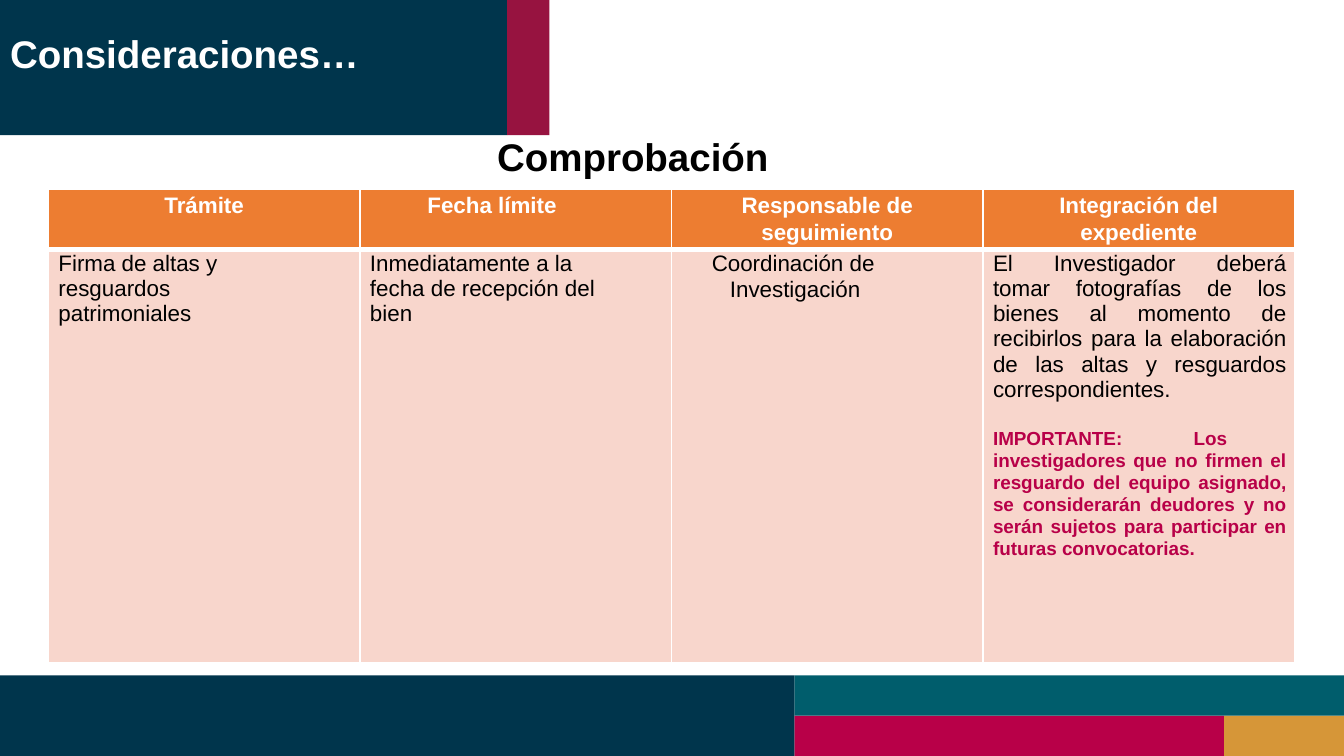
from typing import NamedTuple

from lxml import etree
from pptx import Presentation
from pptx import util as u
from pptx.dml.color import RGBColor
from pptx.enum import shapes, text
from pptx.oxml import ns

SCALE = 9144
FONT = "Arial"
INK = {
    "navy": "00354C", "teal": "005D6C", "pink": "B80048", "wine": "971340",
    "gold": "D69638", "head": "ED7D31", "body": "F8D6CC",
    "white": "FFFFFF", "black": "000000",
}
LEFT, MID, FULL = (text.PP_ALIGN.LEFT, text.PP_ALIGN.CENTER,
                   text.PP_ALIGN.JUSTIFY)


class Block(NamedTuple):
    x: int
    y: int
    w: int
    h: int
    ink: str


class Label(NamedTuple):
    x: int
    y: int
    w: int
    h: int
    words: str
    ink: str


class Para(NamedTuple):
    words: str
    size: float = 16
    ink: str = "black"
    bold: bool = False
    align: text.PP_ALIGN = LEFT
    line: float = 1.01
    space: float = 0
    hang: int = 0
    tab: int = 0


class Cell(NamedTuple):
    paras: list[Para]
    left: int = 10
    top: int = 2
    right: int = 0


def px(n: int) -> u.Emu:
    return u.Emu(n * SCALE)


def rgb(ink: str) -> RGBColor:
    return RGBColor.from_string(INK[ink])


def head(words: str, align: text.PP_ALIGN = MID, line: float = 1.14,
         space: float = 0) -> Para:
    return Para(words, 16, "white", True, align, line, space)


def titles(first: str, second: str) -> Cell:
    return Cell([head(first), head(second, line=1, space=1.6)], 0, 0)


def write(frame, paras: list[Para]) -> None:
    for i, item in enumerate(paras):
        para = frame.add_paragraph() if i else frame.paragraphs[0]
        props = para._p.get_or_add_pPr()
        if item.hang:
            props.set("marL", str(px(item.hang)))
            props.set("indent", str(-px(item.hang)))
        if item.tab:
            tabs = etree.SubElement(props, ns.qn("a:tabLst"))
            etree.SubElement(tabs, ns.qn("a:tab"),
                             pos=str(px(item.tab)), algn="l")
        para.alignment = item.align
        para.line_spacing = item.line
        para.space_before = u.Pt(item.space)
        for j, part in enumerate(item.words.split("\n")):
            if j:
                para.add_line_break()
            run = para.add_run()
            run.text = part
            run.font.name = FONT
            run.font.size = u.Pt(item.size)
            run.font.bold = item.bold
            run.font.color.rgb = rgb(item.ink)


def draw_block(slide, block: Block) -> None:
    box = slide.shapes.add_shape(shapes.MSO_SHAPE.RECTANGLE,
                                 *(px(n) for n in block[:4]))
    box.shadow.inherit = False
    box.fill.solid()
    box.fill.fore_color.rgb = rgb(block.ink)
    box.line.fill.background()


def draw_label(slide, label: Label) -> None:
    box = slide.shapes.add_textbox(*(px(n) for n in label[:4]))
    frame = box.text_frame
    frame.word_wrap = True
    frame.margin_left = frame.margin_top = px(1)
    frame.margin_right = frame.margin_bottom = 0
    write(frame, [Para(label.words, 27.5, label.ink, True, line=1)])


def edge(cell, sides: dict[str, float]) -> None:
    props = cell._tc.get_or_add_tcPr()
    for i, (side, width) in enumerate(sides.items()):
        line = etree.Element(ns.qn(f"a:ln{side}"), w=str(u.Pt(width)))
        fill = etree.SubElement(line, ns.qn("a:solidFill"))
        etree.SubElement(fill, ns.qn("a:srgbClr"), val=INK["white"])
        props.insert(i, line)


def draw_table(slide, rows: list[list[Cell]]) -> None:
    wide, tall = 309, [56, 410]
    table = slide.shapes.add_table(
        len(rows), len(rows[0]), px(48), px(188),
        px(wide * len(rows[0])), px(sum(tall))).table
    for col in table.columns:
        col.width = px(wide)
    for r, row in enumerate(rows):
        table.rows[r].height = px(tall[r])
        for c, item in enumerate(row):
            cell = table.cell(r, c)
            cell.margin_left = px(item.left)
            cell.margin_top = px(item.top)
            cell.margin_right = px(item.right)
            cell.margin_bottom = 0
            cell.fill.solid()
            cell.fill.fore_color.rgb = rgb("body" if r else "head")
            edge(cell, {"L": 1.5, "R": 1.5, "T": 4.25 if r else 1.5,
                        "B": 1.5 if r else 4.25})
            write(cell.text_frame, item.paras)


BLOCKS = [
    Block(0, 0, 503, 134, "navy"),
    Block(1214, 710, 119, 40, "gold"),
    Block(788, 710, 426, 40, "pink"),
    Block(788, 670, 545, 40, "teal"),
    Block(503, 0, 42, 134, "wine"),
    Block(0, 670, 788, 80, "navy"),
]
LABELS = [
    Label(9, 29, 434, 48, "Consideraciones…", "white"),
    Label(492, 131, 303, 48, "Comprobación", "black"),
]
ROWS = [
    [
        Cell([head("Trámite")], 0, 0),
        Cell([head("Fecha límite", LEFT)], 67, 0),
        titles("Responsable de", "seguimiento"),
        titles("Integración del", "expediente"),
    ],
    [
        Cell([Para("Firma de altas y resguardos patrimoniales")], right=90),
        Cell([Para("Inmediatamente a la fecha de recepción del bien")],
             right=50),
        Cell([Para("Coordinación de Investigación", line=1.04, hang=18)],
             40, 1),
        Cell([
            Para("El Investigador deberá\ntomar fotografías de los bienes al "
                 "momento de recibirlos para la elaboración de las altas y "
                 "resguardos correspondientes.", align=FULL),
            Para("IMPORTANTE:\tLos", 13.5, "pink", True, FULL, 1, 19.1,
                 tab=199),
            Para("investigadores que no firmen el resguardo del equipo "
                 "asignado, se considerarán deudores y no serán sujetos para "
                 "participar en futuras convocatorias.",
                 13.5, "pink", True, FULL, 1.04, 0.2),
        ], right=8),
    ],
]


def main() -> None:
    deck = Presentation()
    deck.slide_width, deck.slide_height = px(1333), px(750)
    slide = deck.slides.add_slide(deck.slide_layouts[6])
    for block in BLOCKS:
        draw_block(slide, block)
    draw_label(slide, LABELS[0])
    draw_table(slide, ROWS)
    draw_label(slide, LABELS[1])
    deck.save("out.pptx")


if __name__ == "__main__":
    main()
